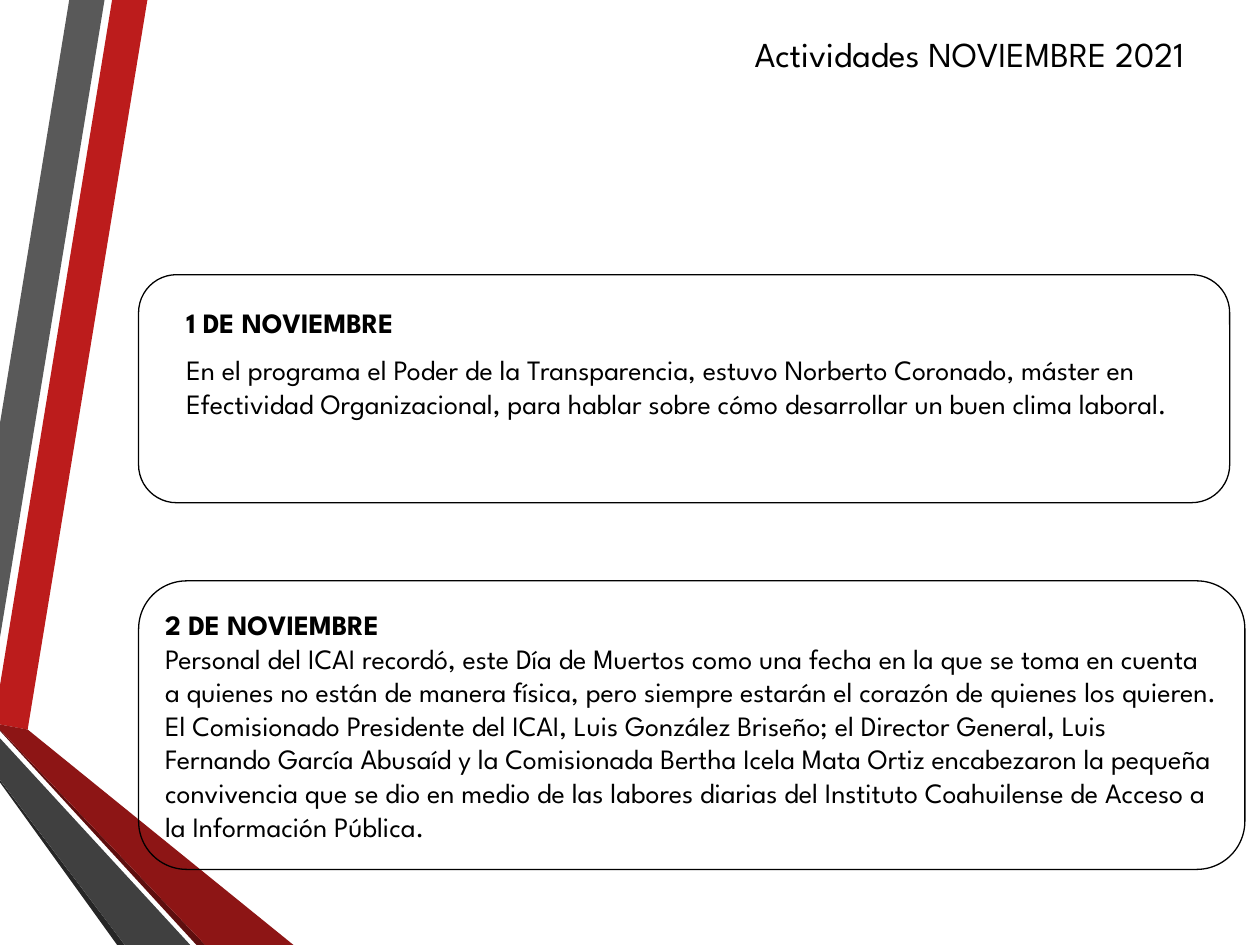
import pptx
import pptx.util
import pptx.dml.color
import pptx.enum.shapes
import pptx.enum.text

Inches = pptx.util.Inches
RGBColor = pptx.dml.color.RGBColor
ALIGN = pptx.enum.text.PP_ALIGN
ANCHOR = pptx.enum.text.MSO_ANCHOR
CARD = pptx.enum.shapes.MSO_SHAPE.FLOWCHART_ALTERNATE_PROCESS

BLACK = RGBColor(0x00, 0x00, 0x00)
RED = RGBColor(0xBC, 0x1C, 0x1C)
DEEP_RED = RGBColor(0x8D, 0x15, 0x15)
DARK_RED = RGBColor(0x5E, 0x0E, 0x0E)
GRAY = RGBColor(0x59, 0x59, 0x59)
DEEP_GRAY = RGBColor(0x40, 0x40, 0x40)
DARK_GRAY = RGBColor(0x26, 0x26, 0x26)

BANDS = [
    (RED, [(0, 5.44), (0, 5.75), (0.22, 5.79), (1.17, 0), (0.89, 0)]),
    (GRAY, [(0.83, 0), (0.55, 0), (0, 3.36), (0, 5.06)]),
    (DARK_GRAY, [(0, 6.19), (0, 6.21), (0.93, 7.5), (0.99, 7.5)]),
    (DARK_RED, [(0, 5.79), (0, 5.8), (1.56, 7.5), (1.63, 7.5)]),
    (DEEP_RED, [(0, 5.79), (1.63, 7.5), (2.33, 7.5), (0.22, 5.79), (0, 5.75)]),
    (DEEP_GRAY, [(0, 6.19), (0.99, 7.5), (1.51, 7.5), (0, 5.86)]),
]

FIRST = (
    "En el programa el Poder de la Transparencia, estuvo Norberto Coronado, "
    "máster en Efectividad Organizacional, para hablar sobre cómo desarrollar "
    "un buen clima laboral."
)
SECOND = [
    "2 DE NOVIEMBRE",
    "Personal del ICAI recordó, este Día de Muertos como una fecha en la que "
    "se toma en cuenta a quienes no están de manera física, pero siempre "
    "estarán el corazón de quienes los quieren.",
    "El Comisionado Presidente del ICAI, Luis González Briseño; el Director "
    "General, Luis Fernando García Abusaíd y la Comisionada Bertha Icela Mata "
    "Ortiz encabezaron la pequeña convivencia que se dio en medio de las "
    "labores diarias del Instituto Coahuilense de Acceso a la Información "
    "Pública.",
]


class Page:
    face = "League Spartan"

    def __init__(self, slide):
        self.shapes = slide.shapes

    def band(self, color, points):
        start, *rest = [(Inches(x), Inches(y)) for x, y in points]
        build = self.shapes.build_freeform(*start)
        build.add_line_segments(rest, close=True)
        shape = build.convert_to_shape()
        shape.shadow.inherit = False
        shape.fill.solid()
        shape.fill.fore_color.rgb = color
        shape.line.fill.background()

    def put(self, frame, lines, size=16, head=False, align=ALIGN.LEFT):
        """Fill a frame with lines; head makes its first line bold."""
        frame.word_wrap = True
        for i, line in enumerate(lines):
            para = frame.add_paragraph() if i else frame.paragraphs[0]
            para.text = line
            para.alignment = align
            para.font.name = self.face
            para.font.size = pptx.util.Pt(size)
            para.font.bold = head and i == 0
            para.font.color.rgb = BLACK

    def text(self, box, line, **style):
        shape = self.shapes.add_textbox(*map(Inches, box))
        self.put(shape.text_frame, [line], **style)

    def card(self, box, lines=()):
        shape = self.shapes.add_shape(CARD, *map(Inches, box))
        shape.shadow.inherit = False
        shape.fill.background()
        shape.line.color.rgb = BLACK
        shape.line.width = pptx.util.Pt(0.75)
        shape.text_frame.vertical_anchor = ANCHOR.MIDDLE
        self.put(shape.text_frame, lines, head=True)


def main():
    deck = pptx.Presentation()
    deck.slide_width = Inches(10)
    deck.slide_height = Inches(7.5)
    page = Page(deck.slides.add_slide(deck.slide_layouts[6]))

    for color, points in BANDS:
        page.band(color, points)
    page.text((5.63, 0.21, 4.13, 0.77), "Actividades NOVIEMBRE 2021",
              size=20, align=ALIGN.CENTER)
    page.card((1.1, 2.18, 8.66, 1.81))
    page.card((1.1, 4.61, 8.78, 2.29), SECOND)
    page.text((1.38, 2.38, 8.19, 0.37), "1 DE NOVIEMBRE", head=True)
    page.text((1.38, 2.75, 8.19, 0.91), FIRST)

    deck.save("out.pptx")


if __name__ == "__main__":
    main()
